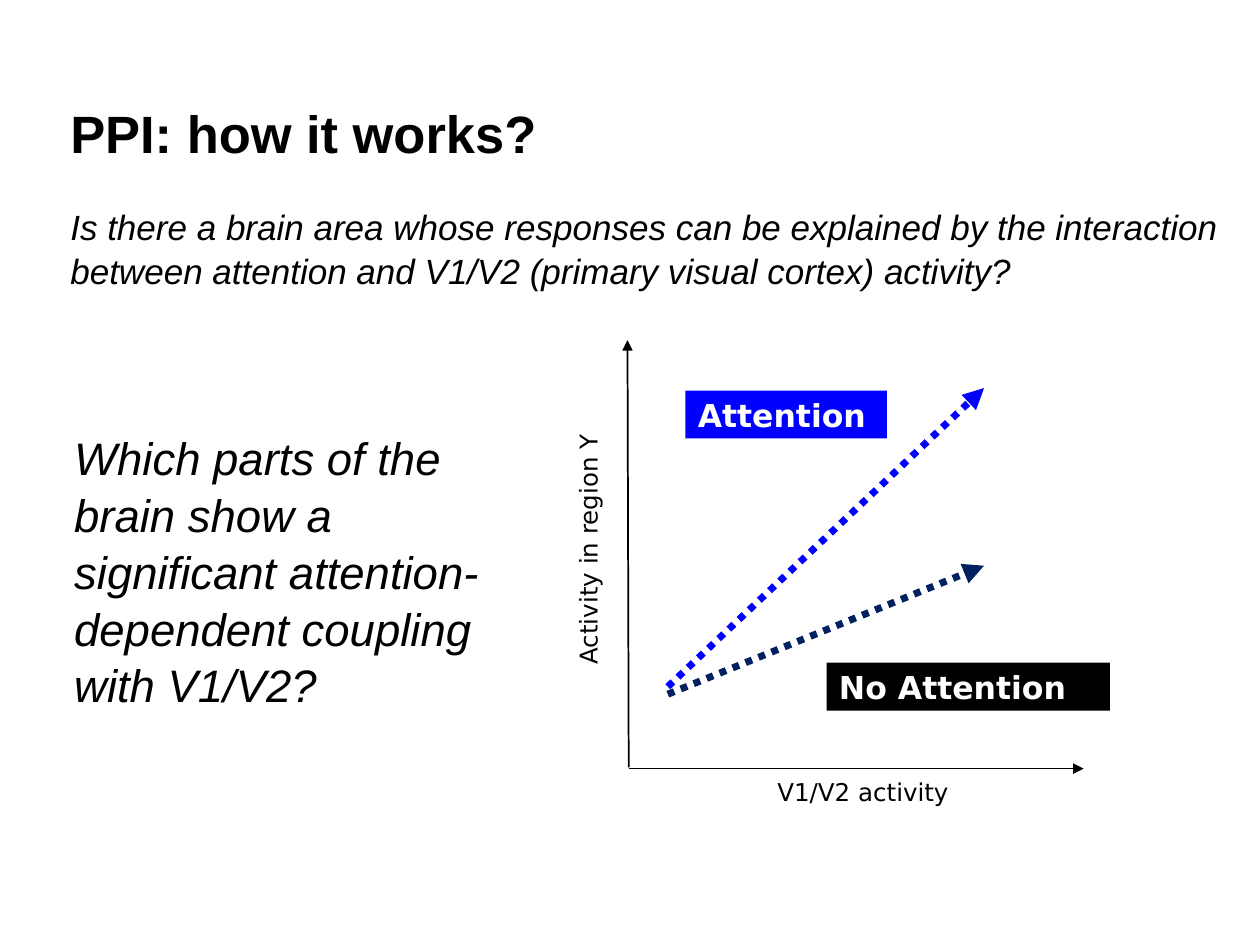
from pptx import Presentation
from pptx.dml.color import RGBColor
from pptx.enum.dml import MSO_LINE
from pptx.enum.shapes import MSO_CONNECTOR, MSO_SHAPE
from pptx.enum.text import MSO_ANCHOR, PP_ALIGN
from pptx.oxml.ns import qn
from pptx.util import Inches, Pt
from lxml import etree

BLACK = RGBColor(0x00, 0x00, 0x00)
WHITE = RGBColor(0xFF, 0xFF, 0xFF)
BLUE = RGBColor(0x00, 0x00, 0xFF)
NAVY = RGBColor(0x00, 0x20, 0x60)
STRAIGHT = MSO_CONNECTOR.STRAIGHT
RECTANGLE = MSO_SHAPE.RECTANGLE
DOTTED = MSO_LINE.ROUND_DOT
TOP, MIDDLE = MSO_ANCHOR.TOP, MSO_ANCHOR.MIDDLE
LEFT, CENTER = PP_ALIGN.LEFT, PP_ALIGN.CENTER

TEXT_FONT = "Arial"
PLOT_FONT = "DejaVu Sans"
TEXT_SPACING = 1.04


class SlideBuilder:
    def __init__(self, slide):
        self.slide = slide

    def fill_text(self, frame, text, font, size, color, bold=False,
                  italic=False, align=LEFT, anchor=TOP):
        frame.word_wrap = True
        frame.vertical_anchor = anchor
        paragraph = frame.paragraphs[0]
        paragraph.alignment = align
        run = paragraph.add_run()
        run.text = text
        run.font.name = font
        run.font.size = Pt(size)
        run.font.bold = bold
        run.font.italic = italic
        run.font.color.rgb = color
        return paragraph

    def statement(self, box, text, size, bold=False, italic=False, inset=0.05):
        frame = self.slide.shapes.add_textbox(*map(Inches, box)).text_frame
        frame.margin_top = Inches(inset)
        paragraph = self.fill_text(frame, text, TEXT_FONT, size, BLACK, bold,
                                   italic)
        paragraph.line_spacing = TEXT_SPACING

    def axis_title(self, center_x, center_y, text, rotation=0):
        width, height = 2.4, 0.34
        title = self.slide.shapes.add_textbox(
            Inches(center_x - width / 2), Inches(center_y - height / 2),
            Inches(width), Inches(height))
        title.rotation = rotation
        self.fill_text(title.text_frame, text, PLOT_FONT, 14, BLACK,
                       align=CENTER)

    def condition_label(self, box, text, fill):
        label = self.slide.shapes.add_shape(RECTANGLE, *map(Inches, box))
        label.shadow.inherit = False
        label.fill.solid()
        label.fill.fore_color.rgb = fill
        label.line.fill.background()
        self.fill_text(label.text_frame, text, PLOT_FONT, 18, WHITE, bold=True,
                       anchor=MIDDLE)

    def arrow(self, start, end, color, width, dash=None):
        arrow = self.slide.shapes.add_connector(
            STRAIGHT, *map(Inches, (*start, *end)))
        arrow.line.color.rgb = color
        arrow.line.width = Pt(width)
        if dash is not None:
            arrow.line.dash_style = dash
        properties = arrow._element.spPr.find(qn("a:ln"))
        etree.SubElement(properties, qn("a:tailEnd"), type="triangle")
        etree.SubElement(arrow._element.spPr, qn("a:effectLst"))


def main():
    presentation = Presentation()
    presentation.slide_width = Inches(10)
    presentation.slide_height = Inches(7.5)
    builder = SlideBuilder(
        presentation.slides.add_slide(presentation.slide_layouts[6]))

    builder.statement((0.46, 0.7, 8.93, 0.82), "PPI: how it works?", 30,
                      bold=True, inset=0.08)
    builder.statement(
        (0.46, 1.57, 9.38, 1.08),
        "Is there a brain area whose responses can be explained by the "
        "interaction between attention and V1/V2 (primary visual cortex) "
        "activity?", 20, italic=True)
    builder.statement(
        (0.49, 3.35, 3.52, 2.29),
        "Which parts of the brain show a significant attention-dependent "
        "coupling with V1/V2?", 26, italic=True)

    builder.arrow((4.99, 6.1), (8.6, 6.1), BLACK, 1)
    builder.arrow((4.99, 6.09), (4.98, 2.7), BLACK, 1)
    builder.arrow((5.3, 5.45), (7.81, 3.08), BLUE, 4, DOTTED)
    builder.arrow((5.3, 5.51), (7.81, 4.49), NAVY, 4, DOTTED)

    builder.condition_label((5.44, 3.1, 1.6, 0.38), "Attention", BLUE)
    builder.condition_label((6.56, 5.26, 2.25, 0.38), "No Attention", BLACK)
    builder.axis_title(6.85, 6.29, "V1/V2 activity")
    builder.axis_title(4.67, 4.36, "Activity in region Y", rotation=270)

    presentation.save("out.pptx")


if __name__ == "__main__":
    main()
